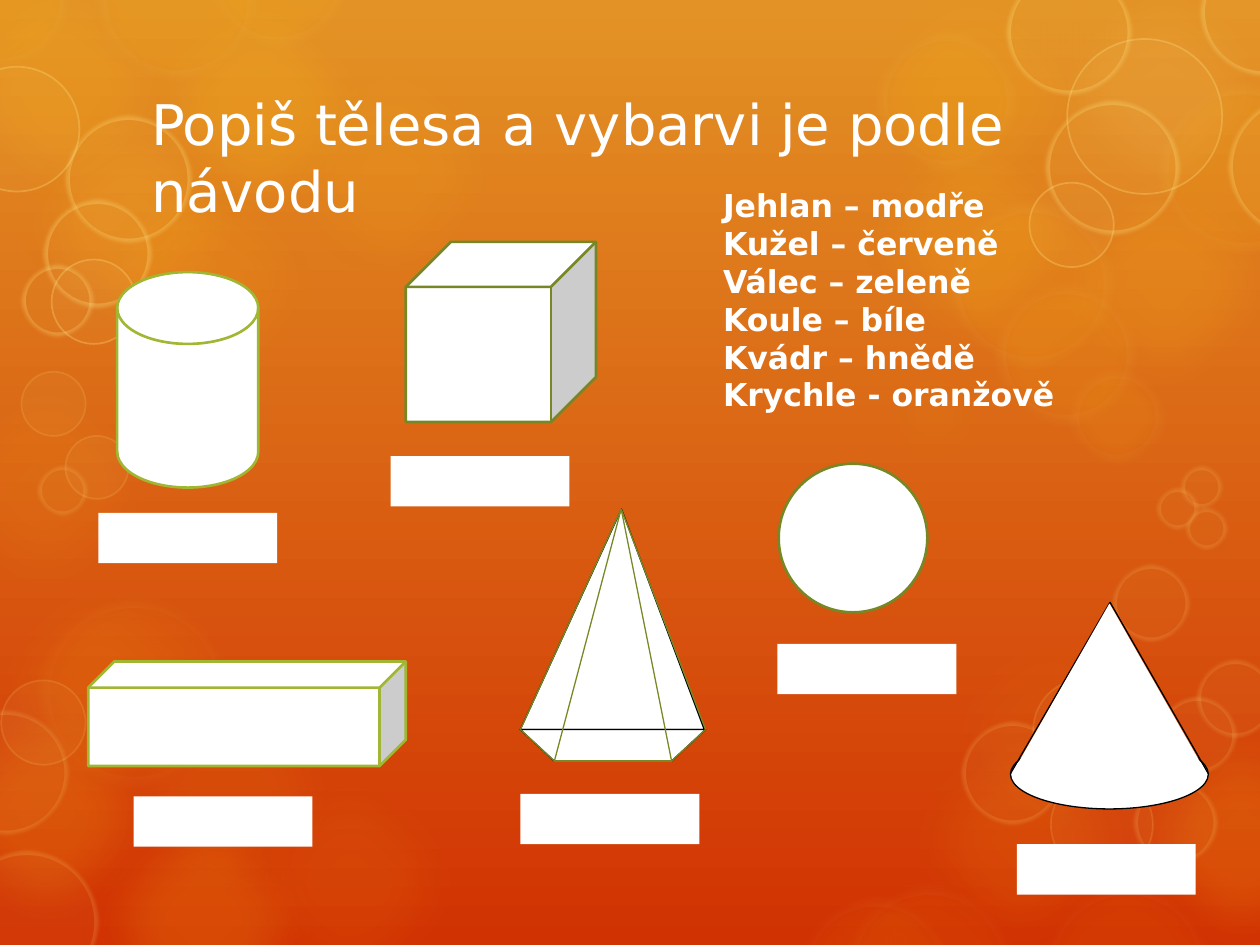
from lxml.etree import SubElement
from pptx import Presentation
from pptx.dml.color import RGBColor
from pptx.enum.shapes import MSO_CONNECTOR, MSO_SHAPE
from pptx.enum.text import MSO_ANCHOR
from pptx.oxml.ns import qn
from pptx.util import Inches, Pt

# Content
TITLE = "Popiš tělesa a vybarvi je podle návodu"
INSTRUCTIONS = [
    "Jehlan – modře",
    "Kužel – červeně",
    "Válec – zeleně",
    "Koule – bíle",
    "Kvádr – hnědě",
    "Krychle - oranžově",
]

THEME = {
    "font": "DejaVu Sans", "title_size": 32, "body_size": 18,
    "white": "FFFFFF", "black": "000000",
    "top": "E39325", "bottom": "D13202",
    "lime": "A1B633", "olive": "778726", "edge": "798826",
    "amber": "FDC61B", "cream": "FFE281", "pale": "FEEBAE",
    "outline": 1.5, "thin": 0.75,
}

# Background bubbles: left, top, diameter
GLOW = 2.09
GLOWS = {  # opacity in percent: left and top of each glow
    5: [(7.29, 4.77)],
    8: [(-0.26, 4.42), (0.77, 5.24), (1.73, 5.96), (-0.69, 2.82)],
    10: [(0.57, 1.2), (2.05, 0.31), (6.69, -0.29), (7.06, 5.62)],
    14: [(-0.56, -0.32)],
    15: [(0, 0.72), (8.2, 1.2), (6.69, 0.86)],
    16: [(0.57, 6.27), (8.81, 5.62), (-0.68, 5.41)],
    20: [(1.01, -0.18)],
}
HALO = dict(fill="amber", opacity=10, line="pale", width=14, line_opacity=6, soft=10)
FAINT_HALO = HALO | dict(opacity=6, line_opacity=4)
RING = dict(fill="cream", opacity=5, line="cream", width=1, line_opacity=30)
FAINT_RING = RING | dict(line_opacity=15)
SOFT = dict(width=5, soft=2.5)
BUBBLES = [
    (dict(fill="cream", opacity=10, soft=25), [(8.2, -0.32, GLOW)]),
    (dict(fill="amber", opacity=10, soft=25), [(6.75, 2.62, 1.33)]),
    (HALO, [(9.18, 0.65, 1.37), (6.94, 0.23, 1.14), (7.52, 1.59, 1.33),
            (7.89, 2.24, 1.14), (8.47, 2.91, 0.79), (0.75, -0.66, 1.31),
            (1.64, -0.75, 1.14), (-0.57, -0.58, 1.14)]),
    (FAINT_HALO, [(0.3, 4.73, 1.53), (6.32, 7.1, 1.25),
                  (6.69, 7.01, 1.37), (8.28, 7.01, 1.33)]),
    (RING, [(-0.36, 0.53, 0.99), (0.41, 2.06, 0.67),
            (8.47, 0.31, 1.23), (8.17, 1.45, 0.67)]),
    (RING | SOFT, [(0.52, 0.92, 1), (0.35, 1.59, 0.85), (0.17, 2.1, 0.57),
                   (7.99, -0.24, 0.99), (9.53, -0.4, 1), (9.75, 0.76, 1.12),
                   (8.3, 0.8, 1.06)]),
    (FAINT_RING, [(0.01, 5.4, 0.67), (8.34, 6.14, 0.81), (8.2, 5.39, 0.81),
                  (0.17, 2.95, 0.51), (0.52, 3.46, 0.5)]),
    (FAINT_RING | SOFT, [(-0.35, 6.75, 1.13), (-0.44, 5.64, 0.98), (7.63, 5.73, 0.81),
                         (9, 6.2, 0.66), (8.83, 4.48, 0.61), (9.2, 5.53, 0.61),
                         (9.5, 5.24, 0.61), (9.37, 3.7, 0.33), (9.18, 3.87, 0.33),
                         (9.41, 4.03, 0.33), (0.3, 3.7, 0.39)]),
]

# Solids with a preset outline: kind, box, line colour
SOLIDS = [
    (MSO_SHAPE.FLOWCHART_MAGNETIC_DISK, (0.93, 2.16, 1.12, 1.71), "lime"),
    (MSO_SHAPE.CUBE, (3.22, 1.92, 1.51, 1.43), "olive"),
    (MSO_SHAPE.CUBE, (0.7, 5.25, 2.52, 0.83), "lime"),
    (MSO_SHAPE.FLOWCHART_CONNECTOR, (6.18, 3.68, 1.18, 1.18), "olive"),
]
CONE_APEX, CONE_SIDES = (8.81, 4.78), [(8.02, 6.14), (9.59, 6.14)]
PYRAMID_APEX = (4.93, 4.04)
PYRAMID_BASE = [(4.13, 5.79), (4.4, 6.04), (5.33, 6.04), (5.6, 5.79)]

# Empty answer boxes
ANSWER_SIZE = (1.42, 0.4)
ANSWERS = [(4.13, 6.3), (6.17, 5.11), (8.07, 6.7), (0.78, 4.07), (3.1, 3.62), (1.06, 6.32)]


def color(name):
    return RGBColor.from_string(THEME[name])


def style(shape, fill="white", opacity=100, line=None, width=THEME["thin"],
          line_opacity=100, soft=0):
    shape.shadow.inherit = False
    shape.fill.solid()
    shape.fill.fore_color.rgb = color(fill)
    if line:
        shape.line.color.rgb = color(line)
        shape.line.width = Pt(width)
    else:
        shape.line.fill.background()
    properties = shape._element.spPr
    for pattern, percent in (("a:solidFill", opacity), ("a:ln/a:solidFill", line_opacity)):
        for paint in properties.xpath(f"{pattern}/a:srgbClr"):
            if percent < 100:
                SubElement(paint, qn("a:alpha"), val=str(percent * 1000))
    if soft:
        SubElement(properties.find(qn("a:effectLst")), qn("a:softEdge"), rad=str(Pt(soft)))


def add_preset(shapes, kind, box, **look):
    shape = shapes.add_shape(kind, *map(Inches, box))
    style(shape, **look)
    return shape


def add_outline(shapes, points, **look):
    corners = [(Inches(x), Inches(y)) for x, y in points]
    builder = shapes.build_freeform(*corners[0])
    builder.add_line_segments(corners[1:], close=True)
    style(builder.convert_to_shape(), **look)


def add_bubble(shapes, left, top, size, **look):
    add_preset(shapes, MSO_SHAPE.OVAL, (left, top, size, size), **look)


def add_edge(shapes, start, end, line):
    connector = shapes.add_connector(MSO_CONNECTOR.STRAIGHT, *map(Inches, start + end))
    connector.line.color.rgb = color(line)
    connector.line.width = Pt(THEME["thin"])
    SubElement(connector._element.spPr, qn("a:effectLst"))


def add_text(shapes, lines, box, size, bold=False, anchor=MSO_ANCHOR.TOP):
    frame = shapes.add_textbox(*map(Inches, box)).text_frame
    frame.word_wrap = True
    frame.vertical_anchor = anchor
    for index, line in enumerate(lines):
        paragraph = frame.paragraphs[0] if index == 0 else frame.add_paragraph()
        run = paragraph.add_run()
        run.text = line
        run.font.name, run.font.size, run.font.bold = THEME["font"], Pt(size), bold
        run.font.color.rgb = color("white")


def main():
    presentation = Presentation()
    presentation.slide_width, presentation.slide_height = Inches(10), Inches(7.5)
    slide = presentation.slides.add_slide(presentation.slide_layouts[6])
    shapes = slide.shapes

    # Background gradient, top to bottom
    background = slide.background.fill
    background.gradient()
    background.gradient_angle = 270
    for stop, name in zip(background.gradient_stops, ("top", "bottom")):
        stop.color.rgb = color(name)

    # Bubbles
    for opacity, places in GLOWS.items():
        for left, top in places:
            add_bubble(shapes, left, top, GLOW, fill="amber", opacity=opacity, soft=25)
    for look, circles in BUBBLES:
        for circle in circles:
            add_bubble(shapes, *circle, **look)

    # Title
    add_text(shapes, [TITLE], (1.1, 0.74, 7.79, 1.01), THEME["title_size"],
             anchor=MSO_ANCHOR.MIDDLE)

    # Cylinder, cube, cuboid and sphere
    for kind, box, line in SOLIDS:
        add_preset(shapes, kind, box, line=line, width=THEME["outline"])

    # Cone
    cone = shapes.add_group_shape().shapes
    add_preset(cone, MSO_SHAPE.OVAL, (8.02, 5.87, 1.57, 0.55), line="black")
    for side in CONE_SIDES:
        add_edge(cone, side, CONE_APEX, "black")
    add_preset(cone, MSO_SHAPE.ISOSCELES_TRIANGLE, (8.09, 4.79, 1.43, 1.25))

    # Pyramid
    pyramid = shapes.add_group_shape().shapes
    face = add_preset(pyramid, MSO_SHAPE.ISOSCELES_TRIANGLE, (4.13, 4.04, 1.46, 1.75),
                      line="black")
    face.adjustments[0] = 0.55
    add_outline(pyramid, PYRAMID_BASE, line="black")
    for corner in PYRAMID_BASE:
        add_edge(pyramid, corner, PYRAMID_APEX, "edge")
    for start, end in zip(PYRAMID_BASE, PYRAMID_BASE[1:]):
        add_edge(pyramid, start, end, "edge")

    # Answer boxes and colouring instructions
    for place in ANSWERS:
        add_preset(shapes, MSO_SHAPE.RECTANGLE, place + ANSWER_SIZE)
    add_text(shapes, INSTRUCTIONS, (5.64, 1.43, 3.04, 1.92), THEME["body_size"], bold=True)

    presentation.save("out.pptx")


if __name__ == "__main__":
    main()
